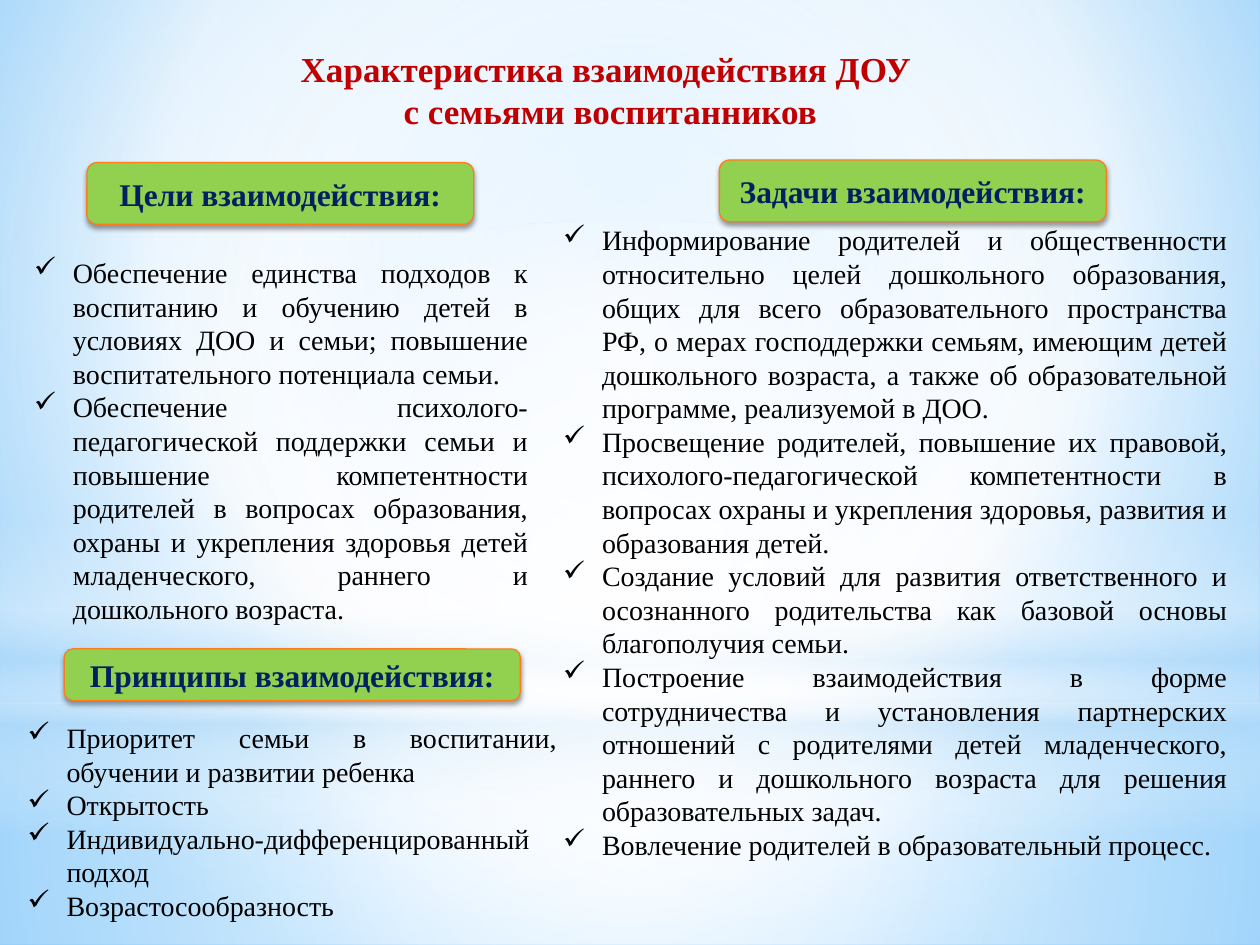
"""Build a slide on how a kindergarten works with pupils' families."""
from lxml import etree
from pptx import Presentation
from pptx.dml.color import RGBColor
from pptx.enum import shapes, text
from pptx.oxml import parse_xml
from pptx.oxml.ns import nsdecls, qn
from pptx.util import Inches, Pt


def write_text(shape, paragraphs, size=16, color="000000", bold=False, align="JUSTIFY", bullet=None):
    frame = shape.text_frame
    frame.word_wrap = True
    for index, content in enumerate(paragraphs):
        paragraph = frame.add_paragraph() if index else frame.paragraphs[0]
        paragraph.alignment = getattr(text.PP_ALIGN, align)
        run = paragraph.add_run()
        run.text = content
        run.font.name = "Times New Roman"
        run.font.size = Pt(size)
        run.font.bold = bold
        run.font.color.rgb = RGBColor.from_string(color)
        if bullet:
            properties = paragraph._p.get_or_add_pPr()
            properties.set("marL", str(Inches(0.31)))
            properties.set("indent", str(-Inches(0.31)))
            etree.SubElement(properties, qn("a:buFont"), typeface="Wingdings")
            etree.SubElement(properties, qn("a:buChar"), char=bullet)


def paint_gradient(fill, element, stops, focus=None):
    fill.gradient()
    gradient = element.find(".//" + qn("a:gradFill"))
    for child in list(gradient):
        gradient.remove(child)
    stop_list = etree.SubElement(gradient, qn("a:gsLst"))
    for position, color, opacity in stops:
        stop = etree.SubElement(stop_list, qn("a:gs"), pos=str(position * 1000))
        tone = etree.SubElement(stop, qn("a:srgbClr"), val=color)
        if opacity < 100:
            etree.SubElement(tone, qn("a:alpha"), val=str(opacity * 1000))
    if focus:
        circle = etree.SubElement(gradient, qn("a:path"), path="circle")
        edges = {side: str(value * 1000) for side, value in zip("ltrb", focus)}
        etree.SubElement(circle, qn("a:fillToRect"), **edges)
    else:
        etree.SubElement(gradient, qn("a:lin"), ang="5400000", scaled="0")


presentation = Presentation()
presentation.slide_width = Inches(10)
presentation.slide_height = Inches(7.5)
slide = presentation.slides.add_slide(presentation.slide_layouts[6])

paint_gradient(slide.background.fill, slide.element,
               [(0, "9ED5FF", 100), (60, "FFFFFF", 100), (100, "5BB9FF", 100)], (20, 10, 20, 60))

center = (50, 50, 50, 50)
glows = [
    ("RECTANGLE", 5.58, 1.92, center,
     [(0, "FFFFFF", 91), (37, "FFFFFF", 76), (100, "B4DCFA", 79)]),
    ("RECTANGLE", 0, 5.58, center,
     [(0, "FFFFFF", 89), (48, "FFFFFF", 62), (100, "B4DCFA", 79)]),
    ("RECTANGLE", 4.12, 2.5, None,
     [(0, "FFFFFF", 0), (29, "FFFFFF", 30), (45, "B4DCFA", 40),
      (55, "FFFFFF", 26), (65, "B4DCFA", 60), (100, "FFFFFF", 0)]),
    ("OVAL", 1.75, 5.58, center, [(0, "FFFFFF", 100), (56, "FFFFFF", 0)]),
]
for kind, top, height, focus, stops in glows:
    glow = slide.shapes.add_shape(getattr(shapes.MSO_SHAPE, kind),
                                  Inches(0), Inches(top), Inches(10), Inches(height))
    glow.shadow.inherit = False
    glow.line.fill.background()
    paint_gradient(glow.fill, glow._element, stops, focus)

title = slide.shapes.add_textbox(Inches(0.91), Inches(0.33), Inches(7.87), Inches(0.77))
write_text(title, ["Характеристика взаимодействия ДОУ ", "с семьями воспитанников"],
           size=20, color="C00000", bold=True, align="CENTER")

headings = [
    ("Цели взаимодействия:", 0.69, 1.29, 3.07, 0.49),
    ("Задачи взаимодействия:", 5.71, 1.27, 3.07, 0.49),
    ("Принципы взаимодействия:", 0.51, 5.15, 3.62, 0.41),
]
for heading, *box in headings:
    plate = slide.shapes.add_shape(shapes.MSO_SHAPE.ROUNDED_RECTANGLE, *map(Inches, box))
    plate.fill.solid()
    plate.fill.fore_color.rgb = RGBColor.from_string("92D050")
    plate.line.color.rgb = RGBColor.from_string("FF7C1B")
    plate.line.width = Pt(0.75)
    plate.shadow.inherit = False
    plate._element.spPr.find(qn("a:effectLst")).append(parse_xml(
        f'<a:outerShdw {nsdecls("a")} blurRad="{Pt(3.1)}" dist="{Pt(1.6)}" dir="5400000" '
        'rotWithShape="0"><a:srgbClr val="000000"><a:alpha val="38000"/></a:srgbClr></a:outerShdw>'))
    plate.text_frame.vertical_anchor = text.MSO_ANCHOR.MIDDLE
    write_text(plate, [heading], size=18, color="002060", bold=True, align="CENTER")

principles = [
    "Приоритет семьи в воспитании, обучении и развитии ребенка",
    "Открытость",
    "Индивидуально-дифференцированный подход",
    "Возрастосообразность",
]
goals = [
    "Обеспечение единства подходов к воспитанию и обучению детей в условиях ДОО и семьи; "
    "повышение воспитательного потенциала семьи.",
    "Обеспечение психолого-педагогической поддержки семьи и повышение компетентности родителей "
    "в вопросах образования, охраны и укрепления здоровья детей младенческого, раннего и "
    "дошкольного возраста.",
]
tasks = [
    "Информирование родителей и общественности относительно целей дошкольного образования, "
    "общих для всего образовательного пространства РФ, о мерах господдержки семьям, имеющим "
    "детей дошкольного возраста, а также об образовательной программе, реализуемой в ДОО.",
    "Просвещение родителей, повышение их правовой, психолого-педагогической компетентности "
    "в вопросах охраны и укрепления здоровья, развития и образования детей.",
    "Создание условий для развития ответственного и осознанного родительства как базовой "
    "основы благополучия семьи.",
    "Построение взаимодействия в форме сотрудничества и установления партнерских отношений "
    "с родителями детей младенческого, раннего и дошкольного возраста для решения "
    "образовательных задач.",
    "Вовлечение родителей в образовательный процесс.",
]
lists = [
    (principles, 0.12, 5.67, 4.4, 1.72),
    (goals, 0.17, 1.98, 4.12, 3.06),
    (tasks, 4.37, 1.72, 5.47, 5.22),
]
for items, *box in lists:
    write_text(slide.shapes.add_textbox(*map(Inches, box)), items, bullet="ü")

presentation.save("out.pptx")
